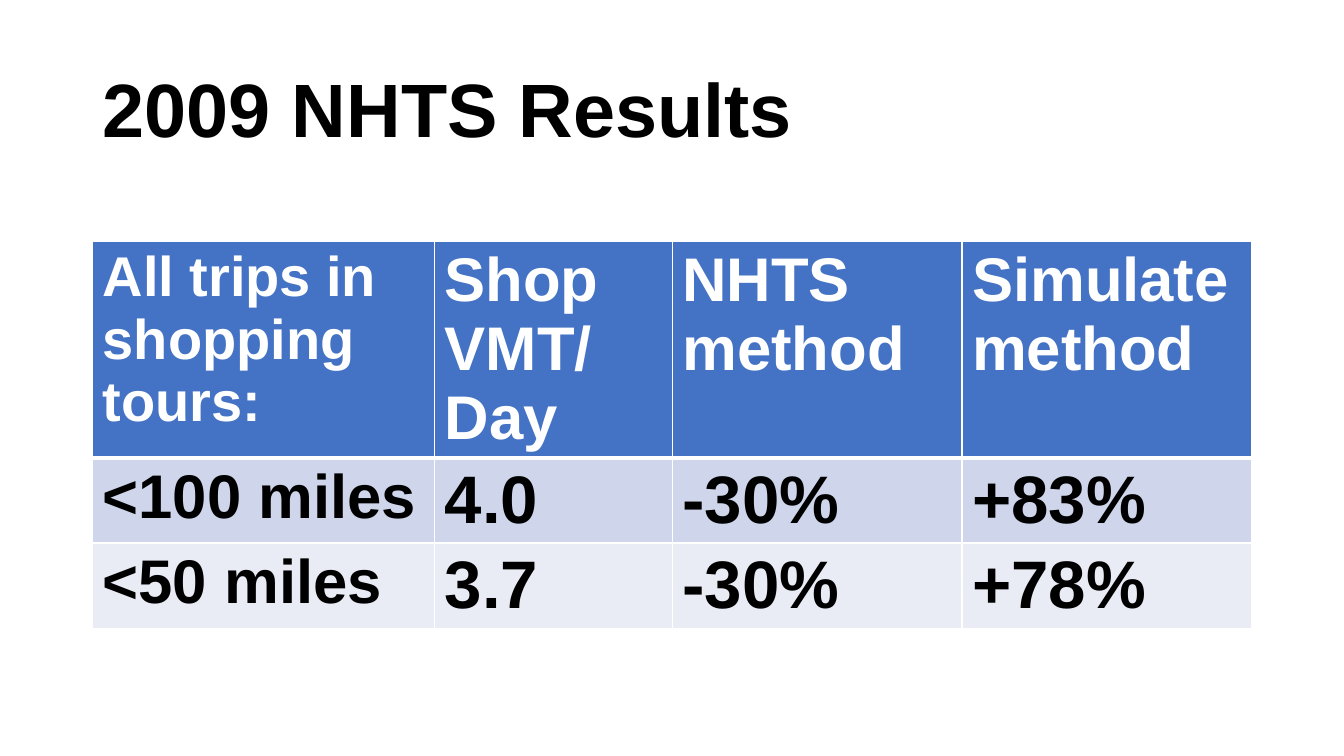
"""Build the 2009 NHTS results slide: a title above a table of shopping tours."""
from dataclasses import dataclass

from lxml.etree import SubElement
from pptx import Presentation
from pptx.dml.color import RGBColor as Rgb
from pptx.enum.text import MSO_ANCHOR as Anchor, MSO_AUTO_SIZE as AutoSize, PP_ALIGN as Align
from pptx.oxml.ns import qn
from pptx.slide import Slide
from pptx.table import _Cell as Cell
from pptx.text.text import _Paragraph as Paragraph
from pptx.util import Emu, Inches, Pt

SLIDE_WIDTH, SLIDE_HEIGHT = Inches(13.33), Inches(7.5)


@dataclass(frozen=True)
class Theme:
    font: str = "Arial"
    ink: str = "000000"
    paper: str = "FFFFFF"
    header: str = "4472C4"
    odd_band: str = "CFD5EA"
    even_band: str = "E9EBF5"
    title_size: int = 54
    corner_size: int = 40
    label_size: int = 44
    value_size: int = 48
    thin_line: int = 1
    thick_line: int = 3


@dataclass(frozen=True)
class Box:
    """A frame in percent of the slide's width and height."""
    left: float
    top: float
    width: float
    height: float

    def lengths(self) -> tuple[Emu, Emu, Emu, Emu]:
        return (across(self.left), down(self.top), across(self.width), down(self.height))


@dataclass(frozen=True)
class TableRow:
    texts: tuple[str, ...]
    sizes: tuple[int, ...]
    fill: str
    color: str
    height: float
    bottom_line: int


THEME = Theme()
TITLE_BOX = Box(6.9, 5.33, 86.25, 19.33)
TABLE_BOX = Box(6.9, 31.87, 86.25, 50.8)
COLUMN_SHARES = (29.5, 20.5, 25, 25)
HEADER_SIZES = (THEME.corner_size,) + (THEME.label_size,) * 3
BODY_SIZES = (THEME.label_size,) + (THEME.value_size,) * 3
ROWS = (
    TableRow(("All trips in shopping tours:", "Shop VMT/\nDay", "NHTS method", "Simulate method"),
             HEADER_SIZES, THEME.header, THEME.paper, 28.4, THEME.thick_line),
    TableRow(("<100 miles", "4.0", "-30%", "+83%"),
             BODY_SIZES, THEME.odd_band, THEME.ink, 11.2, THEME.thin_line),
    TableRow(("<50 miles", "3.7", "-30%", "+78%"),
             BODY_SIZES, THEME.even_band, THEME.ink, 11.2, THEME.thin_line),
)


def across(percent: float) -> Emu:
    return Emu(round(SLIDE_WIDTH * percent / 100))


def down(percent: float) -> Emu:
    return Emu(round(SLIDE_HEIGHT * percent / 100))


def add_run(paragraph: Paragraph, text: str, size: int, color: str) -> None:
    run = paragraph.add_run()
    run.text = text
    run.font.name = THEME.font
    run.font.size = Pt(size)
    run.font.bold = True
    run.font.color.rgb = Rgb.from_string(color)


def add_border(cell: Cell, side: str, width: int) -> None:
    properties = cell._tc.get_or_add_tcPr()
    line = SubElement(properties, qn(f"a:ln{side}"), w=str(Pt(width)))
    fill = SubElement(line, qn("a:solidFill"))
    SubElement(fill, qn("a:srgbClr"), val=THEME.paper)


def draw_title(slide: Slide, text: str) -> None:
    title = slide.shapes.title
    title.left, title.top, title.width, title.height = TITLE_BOX.lengths()
    frame = title.text_frame
    frame.auto_size = AutoSize.NONE
    frame.vertical_anchor = Anchor.MIDDLE
    paragraph = frame.paragraphs[0]
    paragraph.alignment = Align.LEFT
    paragraph.line_spacing = 0.9
    add_run(paragraph, text, THEME.title_size, THEME.ink)


def draw_cell(cell: Cell, text: str, size: int, row: TableRow, top_line: int) -> None:
    widths = {"L": THEME.thin_line, "R": THEME.thin_line, "T": top_line, "B": row.bottom_line}
    for side, width in widths.items():
        add_border(cell, side, width)
    cell.fill.solid()
    cell.fill.fore_color.rgb = Rgb.from_string(row.fill)
    frame = cell.text_frame
    for index, line in enumerate(text.split("\n")):
        paragraph = frame.add_paragraph() if index else frame.paragraphs[0]
        add_run(paragraph, line, size, row.color)


def draw_table(slide: Slide, rows: tuple[TableRow, ...]) -> None:
    table = slide.shapes.add_table(len(rows), len(COLUMN_SHARES), *TABLE_BOX.lengths()).table
    for column, share in zip(table.columns, COLUMN_SHARES):
        column.width = across(TABLE_BOX.width * share / 100)
    top_line = THEME.thin_line
    for row_index, row in enumerate(rows):
        table.rows[row_index].height = down(row.height)
        for column_index, (text, size) in enumerate(zip(row.texts, row.sizes)):
            draw_cell(table.cell(row_index, column_index), text, size, row, top_line)
        top_line = row.bottom_line


def main() -> None:
    presentation = Presentation()
    presentation.slide_width, presentation.slide_height = SLIDE_WIDTH, SLIDE_HEIGHT
    slide = presentation.slides.add_slide(presentation.slide_layouts.get_by_name("Title Only"))
    draw_title(slide, "2009 NHTS Results")
    draw_table(slide, ROWS)
    presentation.save("out.pptx")


if __name__ == "__main__":
    main()
